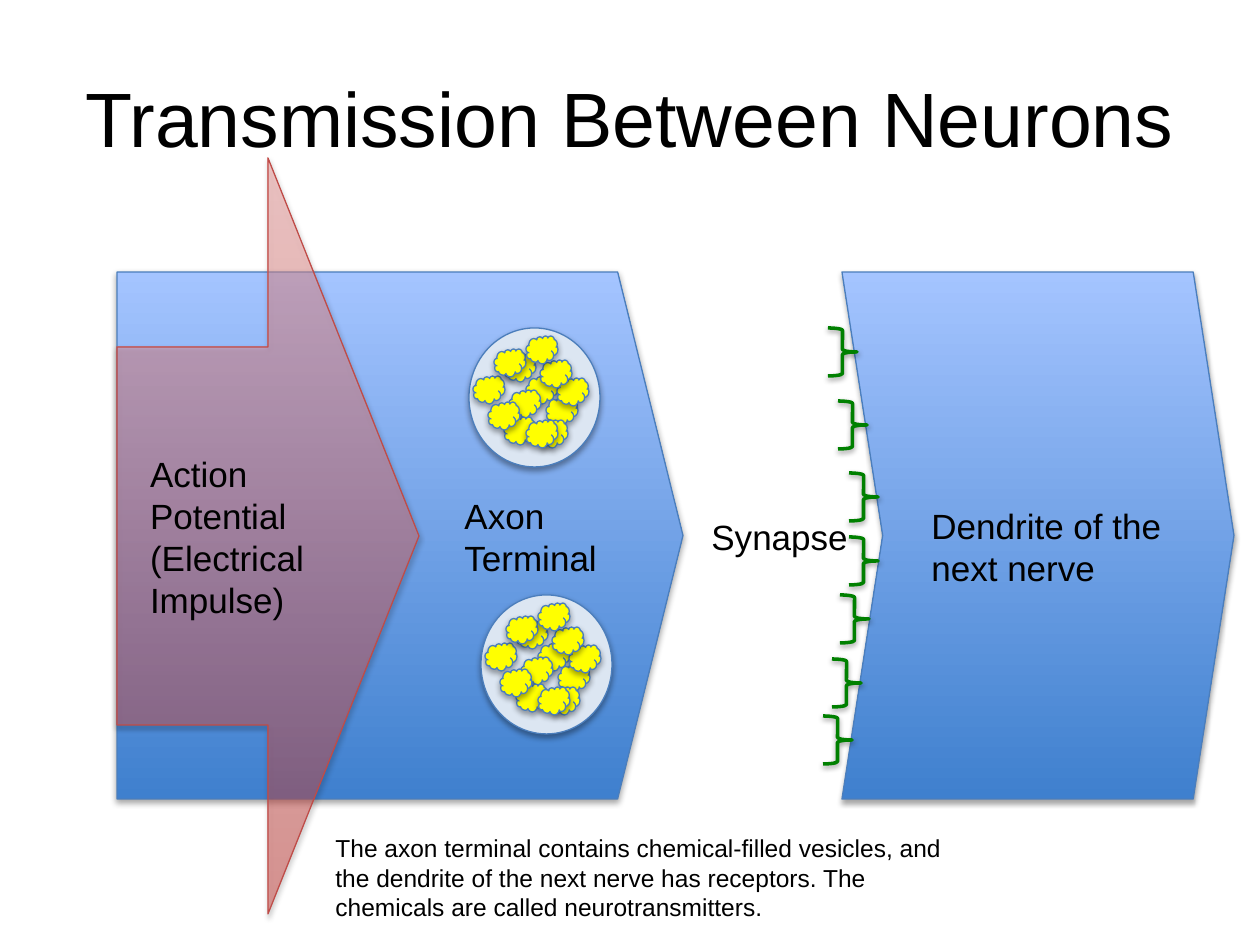
from lxml import etree
from pptx import Presentation
from pptx.dml.color import RGBColor
from pptx.enum.shapes import MSO_SHAPE
from pptx.enum.text import MSO_ANCHOR, PP_ALIGN
from pptx.oxml.ns import qn
from pptx.util import Pt

SCALE = 914400 / 126
PENTAGON, CHEVRON = MSO_SHAPE.PENTAGON, MSO_SHAPE.CHEVRON
ARROW, OVAL = MSO_SHAPE.RIGHT_ARROW, MSO_SHAPE.OVAL
CLOUD, BRACE = MSO_SHAPE.CLOUD, MSO_SHAPE.RIGHT_BRACE
MIDDLE, TOP = MSO_ANCHOR.MIDDLE, MSO_ANCHOR.TOP
LEFT, CENTER = PP_ALIGN.LEFT, PP_ALIGN.CENTER
BLUE, BLUE_LINE = ("3F80CE", "A4C4FF"), "4B7EBC"
RED, RED_LINE = ("D1403C", "FFA6A5"), "BF4C48"
PALE, YELLOW, GREEN = "DCE6F2", "FFFF00", "008000"

presentation = Presentation()
presentation.slide_width = round(1260 * SCALE)
presentation.slide_height = round(945 * SCALE)
slide = presentation.slides.add_slide(presentation.slide_layouts[5])


def add_shape(kind, box, line, fill=None, gradient=None, opacity=100, width=0.75,
              adjustment=None, shadow_alpha=35, shadow_distance=23000):
    shape = slide.shapes.add_shape(kind, *[round(length * SCALE) for length in box])
    if adjustment is not None:
        shape.adjustments[0] = adjustment
    if gradient:
        shape.fill.gradient()
        shape.fill.gradient_angle = 90
        for stop, color in zip(shape.fill.gradient_stops, gradient):
            stop.color.rgb = RGBColor.from_string(color)
        if opacity < 100:
            for color in shape._element.spPr.iter(qn("a:srgbClr")):
                etree.SubElement(color, qn("a:alpha"), val=str(opacity * 1000))
    elif fill:
        shape.fill.solid()
        shape.fill.fore_color.rgb = RGBColor.from_string(fill)
    else:
        shape.fill.background()
    shape.line.color.rgb = RGBColor.from_string(line)
    shape.line.width = Pt(width)
    shape.shadow.inherit = False
    effects = shape._element.spPr.find(qn("a:effectLst"))
    shadow = etree.SubElement(effects, qn("a:outerShdw"), blurRad="40000",
                              dist=str(shadow_distance), dir="5400000", rotWithShape="0")
    color = etree.SubElement(shadow, qn("a:srgbClr"), val="000000")
    etree.SubElement(color, qn("a:alpha"), val=str(shadow_alpha * 1000))


def add_text(text, box, size=20, align=LEFT, anchor=TOP, margin=None, holder=None):
    left, top, width, height = [round(length * SCALE) for length in box]
    shape = holder or slide.shapes.add_textbox(left, top, width, height)
    shape.left, shape.top, shape.width, shape.height = left, top, width, height
    frame = shape.text_frame
    frame.text = text
    frame.word_wrap = True
    frame.vertical_anchor = anchor
    if margin is not None:
        frame.margin_left = frame.margin_right = margin
        frame.margin_top = frame.margin_bottom = margin
    for paragraph in frame.paragraphs:
        paragraph.alignment = align
        font = paragraph.runs[0].font
        font.name, font.size = "Arial", Pt(size)
        font.color.rgb = RGBColor.from_string("000000")


add_text("Transmission Between Neurons", (63, 38, 1134, 158), size=44,
         align=CENTER, anchor=MIDDLE, holder=slide.shapes.title)

add_shape(PENTAGON, (117, 272, 566, 527), BLUE_LINE, gradient=BLUE, adjustment=0.124)
add_shape(CHEVRON, (842, 272, 392, 527), BLUE_LINE, gradient=BLUE, adjustment=0.104)
add_shape(ARROW, (117, 158, 302, 756), RED_LINE, gradient=RED, opacity=45)

add_text("Action Potential\n(Electrical Impulse)", (150, 451, 210, 170),
         anchor=MIDDLE, margin=0)
add_text("Axon\nTerminal", (452, 488, 184, 97))
add_text("Synapse", (699, 509, 175, 55))
add_text("Dendrite of the next nerve", (919, 498, 263, 97))
add_text("The axon terminal contains chemical-filled vesicles, and the dendrite of the "
         "next nerve has receptors. The chemicals are called neurotransmitters.",
         (323, 827, 638, 102), size=14)

vesicles = [(469, 328), (481, 595)]
transmitter_offsets = [
    (35, 26), (57, 48), (40, 62), (35, 89), (4, 48), (77, 69), (88, 50),
    (67, 92), (57, 92), (25, 21), (71, 32), (57, 8), (19, 74),
]
for left, top in vesicles:
    add_shape(OVAL, (left, top, 131, 139), BLUE_LINE, fill=PALE)
    for across, down in transmitter_offsets:
        add_shape(CLOUD, (left + across, top + down, 32, 28), BLUE_LINE, fill=YELLOW)

receptors = [(828, 328), (838, 401), (849, 473), (849, 537),
             (840, 595), (832, 659), (823, 716)]
for left, top in receptors:
    add_shape(BRACE, (left, top, 29, 48), GREEN, width=2,
              shadow_alpha=38, shadow_distance=20000)

presentation.save("out.pptx")
